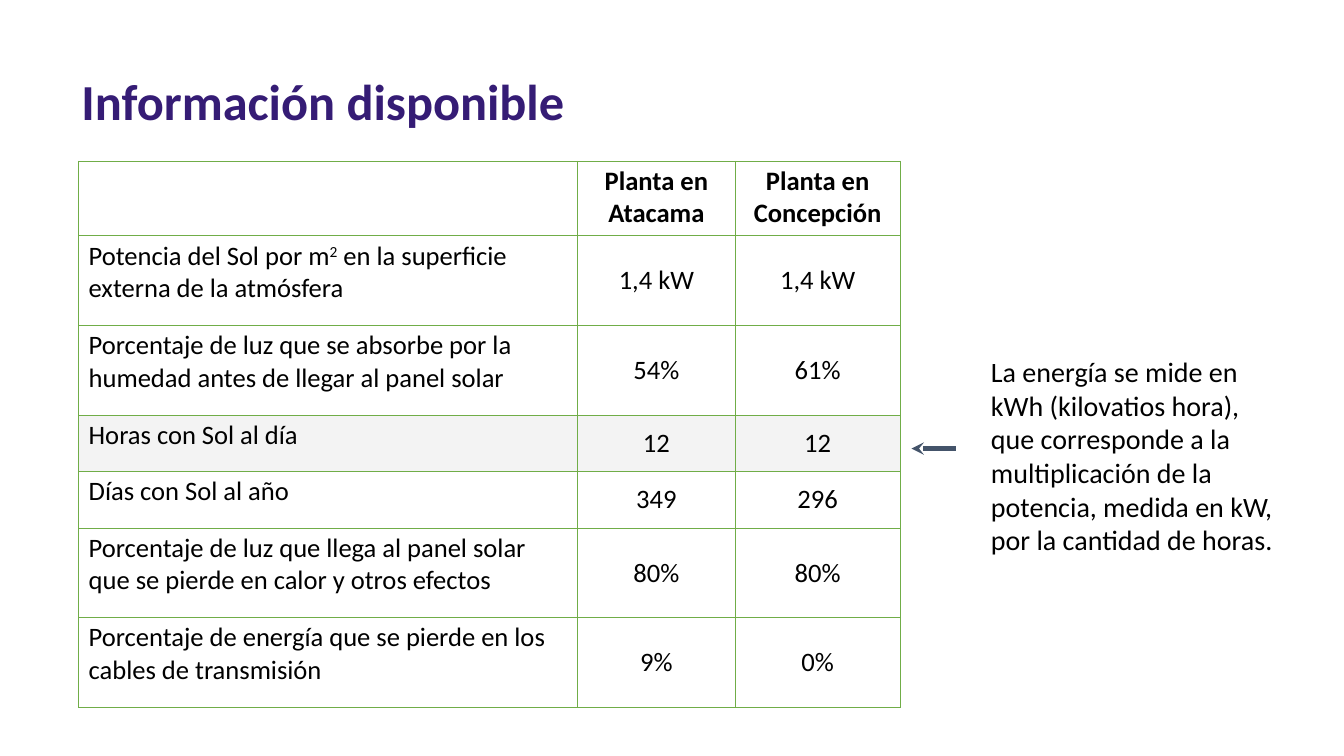
"""Build the slide that compares the two solar plants."""
from dataclasses import dataclass
from typing import Any

from pptx import Presentation
from pptx.dml.color import RGBColor as Rgb
from pptx.enum.shapes import MSO_CONNECTOR as Connector
from pptx.enum.text import MSO_ANCHOR as Anchor, PP_ALIGN as Align
from pptx.oxml.ns import qn
from pptx.util import Inches, Pt
from lxml.etree import SubElement

COLORS = {"title": "351C75", "text": "000000", "border": "70AD47",
          "highlight": "F3F3F3", "arrow": "44546A"}
FONT = "Calibri"
TITLE_FORMAT = {"name": FONT, "size": Pt(36), "bold": True}
NOTE_FORMAT = {"name": FONT, "size": Pt(20), "bold": False}
HEADER_FORMAT = {"name": FONT, "size": Pt(19), "bold": True}
BODY_FORMAT = {**HEADER_FORMAT, "bold": False}
CELL_FORMAT = {"margin_left": Inches(0.1), "margin_right": Inches(0.1),
               "margin_top": Inches(0.04), "margin_bottom": Inches(0.04)}
COLUMN_WIDTHS = (4.95, 1.56, 1.64)
SUPERSCRIPT = "²"


@dataclass(frozen=True)
class Row:
    """A table row: label, value per plant, height in inches."""
    label: str
    atacama: str
    concepcion: str
    height: float = 0.89
    header: bool = False
    highlight: bool = False


@dataclass(frozen=True)
class TextBlock:
    """A free text with its place in inches and its format."""
    text: str
    left: float
    top: float
    width: float
    height: float
    color: str
    format: dict[str, Any]


ROWS = (
    Row("", "Planta en Atacama", "Planta en Concepción", 0.74, header=True),
    Row("Potencia del Sol por m² en la superficie externa de la atmósfera",
        "1,4 kW", "1,4 kW"),
    Row("Porcentaje de luz que se absorbe por la humedad antes de llegar al panel solar",
        "54%", "61%"),
    Row("Horas con Sol al día", "12", "12", 0.56, highlight=True),
    Row("Días con Sol al año", "349", "296", 0.56),
    Row("Porcentaje de luz que llega al panel solar que se pierde en calor y otros efectos",
        "80%", "80%"),
    Row("Porcentaje de energía que se pierde en los cables de transmisión",
        "9%", "0%"),
)
TEXTS = (
    TextBlock("Información disponible", 0.71, 0.65, 8.59, 0.71, "title", TITLE_FORMAT),
    TextBlock("La energía se mide en kWh (kilovatios hora), que corresponde a la "
              "multiplicación de la potencia, medida en kW, por la cantidad de horas.",
              9.73, 3.47, 3.15, 2.12, "text", NOTE_FORMAT),
)


def apply_format(target: Any, values: dict[str, Any]) -> None:
    """Set each named attribute on the target."""
    for name, value in values.items():
        setattr(target, name, value)


def add_run(paragraph: Any, text: str, color: str, values: dict[str, Any]) -> Any:
    """Append formatted text to a paragraph."""
    run = paragraph.add_run()
    run.text = text
    apply_format(run.font, values)
    run.font.color.rgb = Rgb.from_string(COLORS[color])
    return run


def add_text(slide: Any, block: TextBlock) -> None:
    """Draw a wrapped free text."""
    place = map(Inches, (block.left, block.top, block.width, block.height))
    frame = slide.shapes.add_textbox(*place).text_frame
    frame.word_wrap = True
    add_run(frame.paragraphs[0], block.text, block.color, block.format)


def add_borders(cell: Any) -> None:
    """Outline a cell on its four sides, ahead of its fill."""
    properties = cell._tc.get_or_add_tcPr()
    for position, side in enumerate(("lnL", "lnR", "lnT", "lnB")):
        border = SubElement(properties, qn(f"a:{side}"), w=str(Pt(0.75)))
        fill = SubElement(border, qn("a:solidFill"))
        SubElement(fill, qn("a:srgbClr"), val=COLORS["border"])
        properties.insert(position, border)


def fill_cell(cell: Any, text: str, row: Row, is_label: bool) -> None:
    """Write and style one table cell."""
    apply_format(cell, CELL_FORMAT)
    cell.vertical_anchor = Anchor.TOP if is_label or row.header else Anchor.MIDDLE
    paragraph = cell.text_frame.paragraphs[0]
    paragraph.alignment = Align.LEFT if is_label else Align.CENTER
    values = HEADER_FORMAT if row.header else BODY_FORMAT
    before, mark, after = text.partition(SUPERSCRIPT)
    if before:
        add_run(paragraph, before, "text", values)
    if mark:
        raised = add_run(paragraph, "2", "text", values)
        raised._r.get_or_add_rPr().set("baseline", "30000")
        add_run(paragraph, after, "text", values)
    if row.highlight:
        cell.fill.solid()
        cell.fill.fore_color.rgb = Rgb.from_string(COLORS["highlight"])
    else:
        cell.fill.background()
    add_borders(cell)


def add_plant_table(slide: Any) -> None:
    """Draw the comparison of the plants."""
    frame = slide.shapes.add_table(
        len(ROWS), len(COLUMN_WIDTHS), Inches(0.78), Inches(1.6),
        Inches(sum(COLUMN_WIDTHS)), Inches(sum(row.height for row in ROWS)))
    table = frame.table
    apply_format(table, {"first_row": False, "horz_banding": False})
    for column, width in zip(table.columns, COLUMN_WIDTHS):
        column.width = Inches(width)
    for line, row in zip(table.rows, ROWS):
        line.height = Inches(row.height)
        texts = (row.label, row.atacama, row.concepcion)
        for index, (cell, text) in enumerate(zip(line.cells, texts)):
            fill_cell(cell, text, row, is_label=index == 0)


def add_hours_arrow(slide: Any) -> None:
    """Point from the energy note to the row of sun hours."""
    arrow = slide.shapes.add_connector(
        Connector.STRAIGHT, *map(Inches, (9.48, 4.45, 9.04, 4.45)))
    arrow.line.width = Pt(3)
    arrow.line.color.rgb = Rgb.from_string(COLORS["arrow"])
    SubElement(arrow.line._get_or_add_ln(), qn("a:tailEnd"), type="stealth")
    SubElement(arrow._element.spPr, qn("a:effectLst"))


def main() -> None:
    """Build and save the slide."""
    deck = Presentation()
    deck.slide_width, deck.slide_height = Inches(13.33), Inches(7.5)
    slide = deck.slides.add_slide(deck.slide_layouts[6])
    title, energy_note = TEXTS
    add_text(slide, title)
    add_plant_table(slide)
    add_text(slide, energy_note)
    add_hours_arrow(slide)
    deck.save("out.pptx")


if __name__ == "__main__":
    main()
